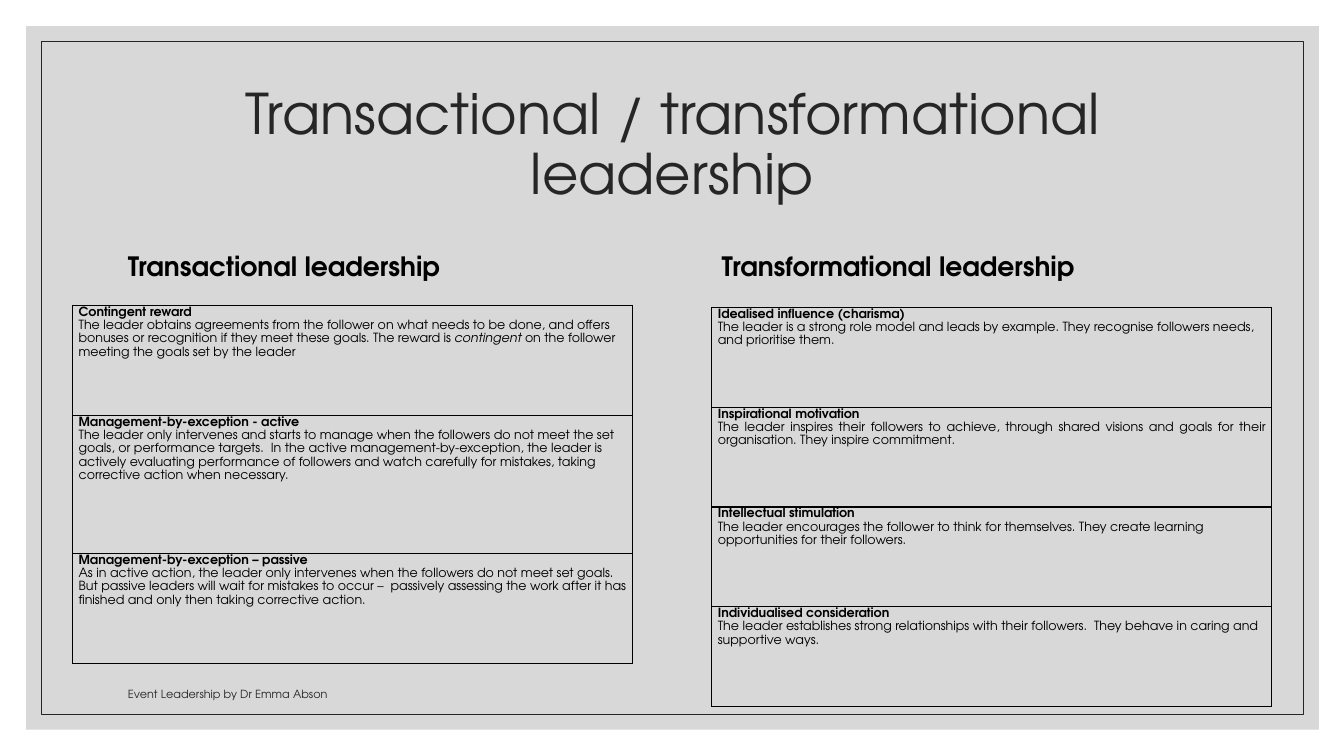
from lxml import etree
from pptx import Presentation
from pptx import util as u
from pptx.dml.color import RGBColor
from pptx.enum import shapes, text
from pptx.oxml import ns

INK = RGBColor(0x26, 0x26, 0x26)
BLACK = RGBColor(0, 0, 0)
GREY = RGBColor(0xBF, 0xBF, 0xBF)
FACE = "TeX Gyre Adventor"
LEFT, MID, JUST = text.PP_ALIGN.LEFT, text.PP_ALIGN.CENTER, text.PP_ALIGN.JUSTIFY
CORE, BASE = text.MSO_ANCHOR.MIDDLE, text.MSO_ANCHOR.BOTTOM

HEAD = {"size": u.Pt(19), "bold": True, "color": BLACK}
LABELS = [
    ("Transactional / transformational leadership", (1.17, 0.7, 11, 1.5),
     CORE, MID, 0.9, {"size": u.Pt(40), "color": INK}),
    ("Transactional leadership", (1.17, 2.27, 5.1, 0.7), CORE, LEFT, 1.1, HEAD),
    ("Transformational leadership", (7.06, 2.27, 5.1, 0.7), CORE, LEFT, 1.1, HEAD),
    ("Event Leadership by Dr Emma Abson", (1.17, 6.6, 6.36, 0.4),
     BASE, LEFT, 1.0, {"size": u.Pt(8), "color": INK}),
]
TABLES = [
    ((0.72, 3.03), (1.09, 1.37, 1.09), [
        ("Contingent reward", LEFT,
         ["The leader obtains agreements from the follower on what needs to be done, "
          "and offers bonuses or recognition if they meet these goals. The reward is ",
          "contingent ", "on the follower meeting the goals set by the leader"], LEFT),
        ("Management-by-exception - active", LEFT,
         ["The leader only intervenes and starts to manage when the followers do not "
          "meet the set goals, or performance targets.  In the active "
          "management-by-exception, the leader is  actively evaluating performance of "
          "followers and watch carefully for mistakes, taking corrective action when "
          "necessary."], LEFT),
        ("Management-by-exception – passive", LEFT,
         ["As in active action, the leader only intervenes when the followers do not "
          "meet set goals. But passive leaders will wait for mistakes to occur –  "
          "passively assessing the work after it has finished and only then taking "
          "corrective action."], LEFT),
    ]),
    ((7.06, 3.05), (0.99,) * 4, [
        ("Idealised influence (charisma)", JUST,
         ["The leader is a strong role model and leads by example. They recognise "
          "followers needs, and prioritise them."], LEFT),
        ("Inspirational motivation", LEFT,
         ["The leader inspires their followers to achieve, through shared visions and "
          "goals for their organisation. They inspire commitment."], JUST),
        ("Intellectual stimulation", LEFT,
         ["The leader encourages the follower to think for themselves. They create "
          "learning opportunities for their followers."], LEFT),
        ("Individualised consideration", LEFT,
         ["The leader establishes strong relationships with their followers.  They "
          "behave in caring and supportive ways."], LEFT),
    ]),
]
WIDTH = 5.55


def put(item, form):
    for key, val in form.items():
        setattr(item, key, val)


def write(para, words, form):
    run = para.add_run()
    run.text = words
    form = dict(form)
    run.font.color.rgb = form.pop("color")
    put(run.font, {"name": FACE, **form})


def panel(slide, box):
    rect = slide.shapes.add_shape(shapes.MSO_SHAPE.RECTANGLE, *map(u.Inches, box))
    rect.shadow.inherit = False
    return rect


def label(slide, words, box, anchor, align, space, form):
    frame = slide.shapes.add_textbox(*map(u.Inches, box)).text_frame
    put(frame, {"word_wrap": True, "vertical_anchor": anchor})
    para = frame.paragraphs[0]
    put(para, {"alignment": align, "line_spacing": space})
    write(para, words, form)


def border(cell):
    props = cell._tc.get_or_add_tcPr()
    for rank, side in enumerate(("lnL", "lnR", "lnT", "lnB")):
        line = etree.Element(ns.qn("a:" + side), w=str(u.Pt(1)))
        fill = etree.SubElement(line, ns.qn("a:solidFill"))
        etree.SubElement(fill, ns.qn("a:srgbClr"), val=str(BLACK))
        props.insert(rank, line)


def fill_cell(cell, title, first, parts, second):
    put(cell, {"margin_left": u.Inches(0.06), "margin_right": u.Inches(0.06),
               "margin_top": 0, "margin_bottom": 0})
    cell.fill.background()
    border(cell)
    frame = cell.text_frame
    head, body = frame.paragraphs[0], frame.add_paragraph()
    for para, align in ((head, first), (body, second)):
        put(para, {"alignment": align, "line_spacing": 1.15})
    form = {"size": u.Pt(9), "color": BLACK}
    write(head, title, {**form, "bold": True})
    for rank, words in enumerate(parts):
        write(body, words, {**form, "bold": False, "italic": rank == 1})


def grid(slide, spot, rows, cells):
    box = (*spot, WIDTH, sum(rows))
    table = slide.shapes.add_table(len(rows), 1, *map(u.Inches, box)).table
    put(table, {"first_row": False, "horz_banding": False})
    for rank, (high, data) in enumerate(zip(rows, cells)):
        table.rows[rank].height = u.Inches(high)
        fill_cell(table.cell(rank, 0), *data)


def main():
    deck = Presentation()
    put(deck, {"slide_width": u.Inches(13.33), "slide_height": u.Inches(7.5)})
    slide = deck.slides.add_slide(deck.slide_layouts[6])

    back = panel(slide, (0.26, 0.26, 12.82, 6.98))
    back.fill.solid()
    back.fill.fore_color.rgb = GREY
    tint = back.fill._xPr.find(".//" + ns.qn("a:srgbClr"))
    etree.SubElement(tint, ns.qn("a:alpha"), val="60000")
    back.line.fill.background()

    frame = panel(slide, (0.41, 0.41, 12.52, 6.68))
    frame.fill.background()
    frame.line.color.rgb = INK
    frame.line.width = u.Pt(0.5)

    for item in LABELS:
        label(slide, *item)
    for item in TABLES:
        grid(slide, *item)
    deck.save("out.pptx")


if __name__ == "__main__":
    main()
